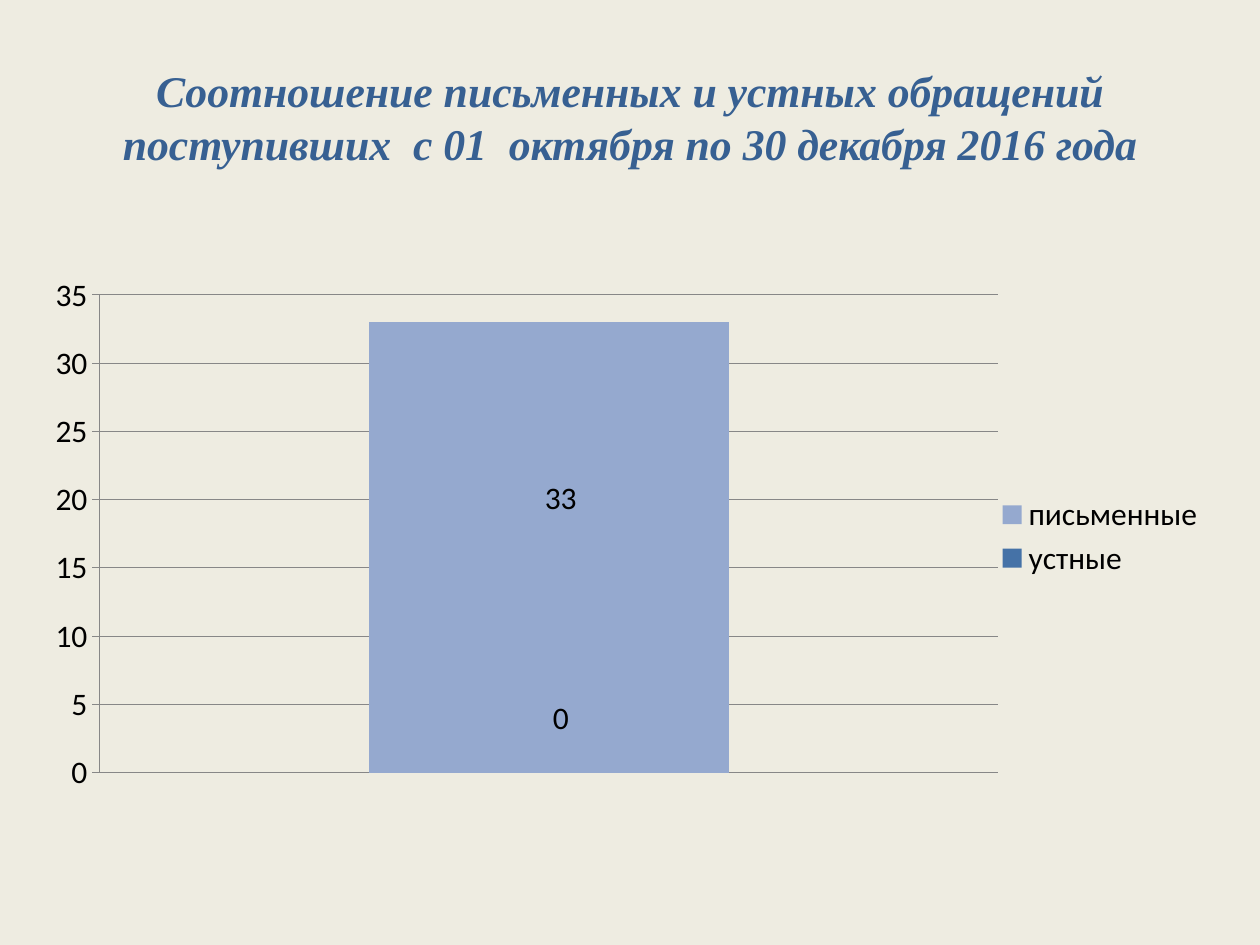
from typing import NamedTuple

from pptx import Presentation, util as u
from pptx.chart.data import CategoryChartData
from pptx.dml.color import RGBColor
from pptx.enum import chart as ch, text
from pptx.oxml import parse_xml
from pptx.oxml.ns import nsdecls

CREAM = RGBColor(0xEE, 0xEC, 0xE1)
NAVY = RGBColor(0x37, 0x60, 0x92)
BLUE = RGBColor(0x45, 0x72, 0xA7)
PALE_BLUE = RGBColor(0x95, 0xA9, 0xCF)
GRAY = RGBColor(0x87, 0x87, 0x87)
BLACK = RGBColor(0, 0, 0)


class Appeals(NamedTuple):
    name: str
    count: int
    color: RGBColor
    label_shift: dict[str, float]


APPEALS = [
    Appeals("устные", 0, BLUE, {"x": 0.01, "y": -0.1}),
    Appeals("письменные", 33, PALE_BLUE, {"x": 0.01, "y": -0.09}),
]
PLOT_AREA = {"layoutTarget": "inner", "xMode": "edge", "yMode": "edge",
             "x": 0.06, "y": 0.03, "w": 0.76, "h": 0.88}
LEGEND_AREA = {"xMode": "edge", "yMode": "edge",
               "x": 0.82, "y": 0.39, "w": 0.18, "h": 0.17}
LEADER_EXT = (
    f'<c:extLst {nsdecls("c")}><c:ext uri="{{CE6537A1-D6FC-4f65-9D91-7224C49458BB}}"'
    ' xmlns:c15="http://schemas.microsoft.com/office/drawing/2012/chart">'
    '<c15:showLeaderLines val="0"/></c:ext></c:extLst>')


def set_layout(parent, after: str, values: dict) -> None:
    """Give a chart part a manual layout, placed after the named child or first."""
    for old in parent.xpath("c:layout"):
        parent.remove(old)
    items = "".join(f'<c:{k} val="{v}"/>' for k, v in values.items())
    layout = parse_xml(f'<c:layout {nsdecls("c")}><c:manualLayout>{items}'
                       '</c:manualLayout></c:layout>')
    previous = parent.xpath(f"c:{after}") if after else []
    if previous:
        previous[0].addnext(layout)
    else:
        parent.insert(0, layout)


def hide_leader_lines(labels) -> None:
    """Turn off the lines between moved labels and their columns."""
    for old in labels.xpath("c:showLeaderLines | c:extLst"):
        labels.remove(old)
    labels.append(parse_xml(f'<c:showLeaderLines {nsdecls("c")} val="0"/>'))
    labels.append(parse_xml(LEADER_EXT))


def add_title(slide, title: str) -> None:
    """Add the centred slide heading."""
    sp = slide.shapes.add_textbox(u.Inches(0.5), u.Inches(0.3), u.Inches(9), u.Inches(1.25))
    tf = sp.text_frame
    tf.word_wrap = True
    tf.vertical_anchor = text.MSO_ANCHOR.MIDDLE
    p = tf.paragraphs[0]
    p.text = title
    p.alignment = text.PP_ALIGN.CENTER
    p.font.name, p.font.size = "Times New Roman", u.Pt(25)
    p.font.bold = p.font.italic = True
    p.font.color.rgb = NAVY


def add_appeals_chart(slide, appeals: list[Appeals]) -> None:
    """Add the stacked column chart of appeals."""
    data = CategoryChartData()
    data.categories = ["1"]
    for a in appeals:
        data.add_series(a.name, [a.count])
    chart = slide.shapes.add_chart(
        ch.XL_CHART_TYPE.COLUMN_STACKED, u.Inches(0.23), u.Inches(2.19),
        u.Inches(9.38), u.Inches(4.33), data).chart
    chart.has_title = False
    chart.font.name, chart.font.size = "Calibri", u.Pt(18)
    chart.font.color.rgb = BLACK

    plot = chart.plots[0]
    plot.gap_width, plot.overlap, plot.vary_by_categories = 150, 100, False
    for a, series in zip(appeals, plot.series):
        series.format.fill.solid()
        series.format.fill.fore_color.rgb = a.color
        series.points[0].data_label.position = ch.XL_LABEL_POSITION.CENTER
    for a, label in zip(appeals, chart.element.xpath(".//c:dLbl")):
        set_layout(label, "idx", a.label_shift)
    for labels in chart.element.xpath(".//c:ser/c:dLbls"):
        hide_leader_lines(labels)

    chart.category_axis.visible = False
    axis = chart.value_axis
    axis.minimum_scale, axis.maximum_scale, axis.major_unit = 0, 35, 5
    axis.major_tick_mark = ch.XL_TICK_MARK.OUTSIDE
    axis.has_major_gridlines = True
    for line in (axis.format.line, axis.major_gridlines.format.line):
        line.color.rgb = GRAY
        line.width = u.Pt(0.5)

    chart.has_legend = True
    chart.legend.position = ch.XL_LEGEND_POSITION.RIGHT
    chart.legend.include_in_layout = False
    set_layout(chart.element.xpath(".//c:plotArea")[0], "", PLOT_AREA)
    set_layout(chart.element.xpath(".//c:legend")[0], "legendPos", LEGEND_AREA)


def main() -> None:
    """Build and save the slide."""
    prs = Presentation()
    prs.slide_width, prs.slide_height = u.Inches(10), u.Inches(7.5)
    s = prs.slides.add_slide(prs.slide_layouts[6])
    s.background.fill.solid()
    s.background.fill.fore_color.rgb = CREAM
    add_title(s, "Соотношение письменных и устных обращений\v"
                 "поступивших  с 01  октября по 30 декабря 2016 года")
    add_appeals_chart(s, APPEALS)
    prs.save("out.pptx")


if __name__ == "__main__":
    main()
